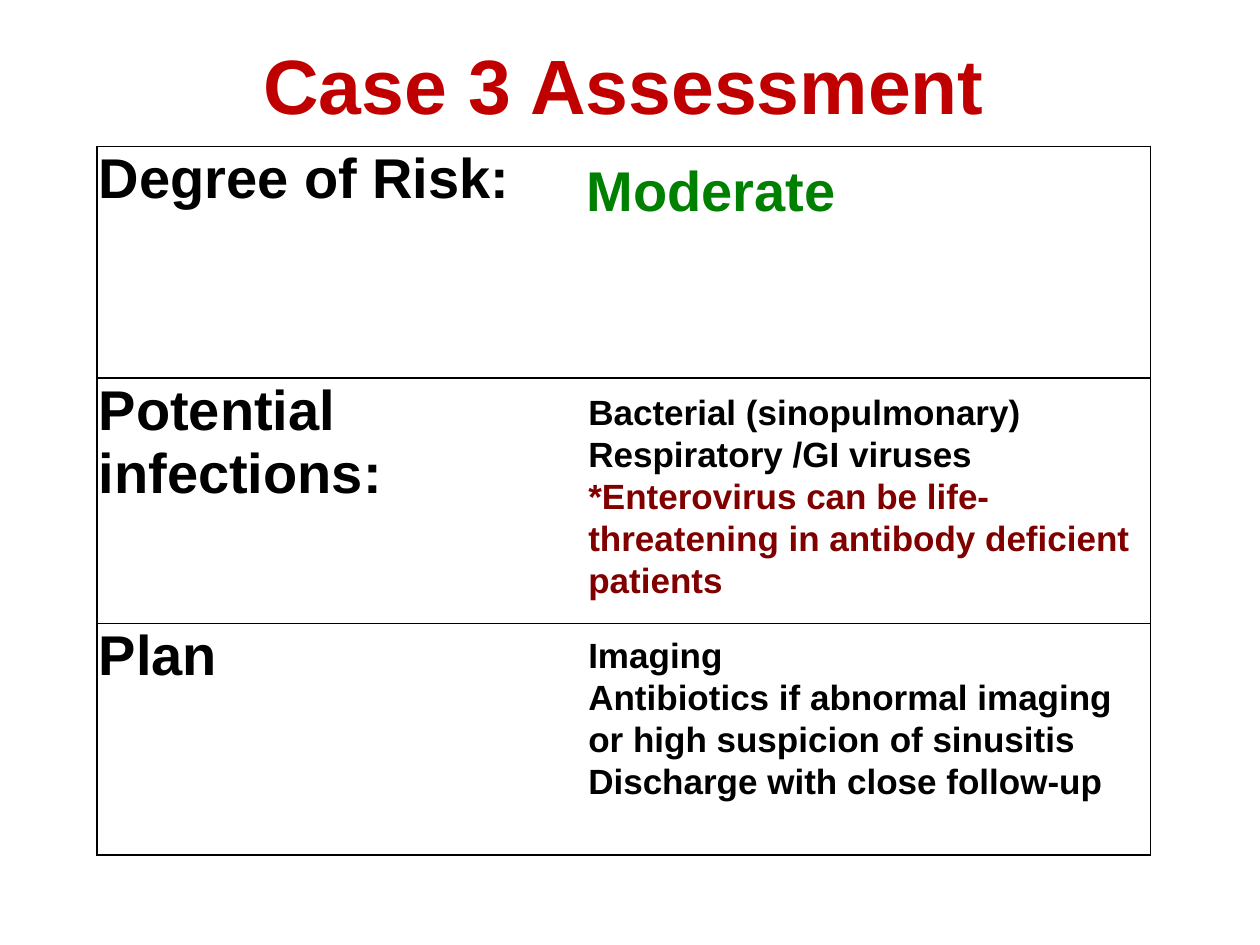
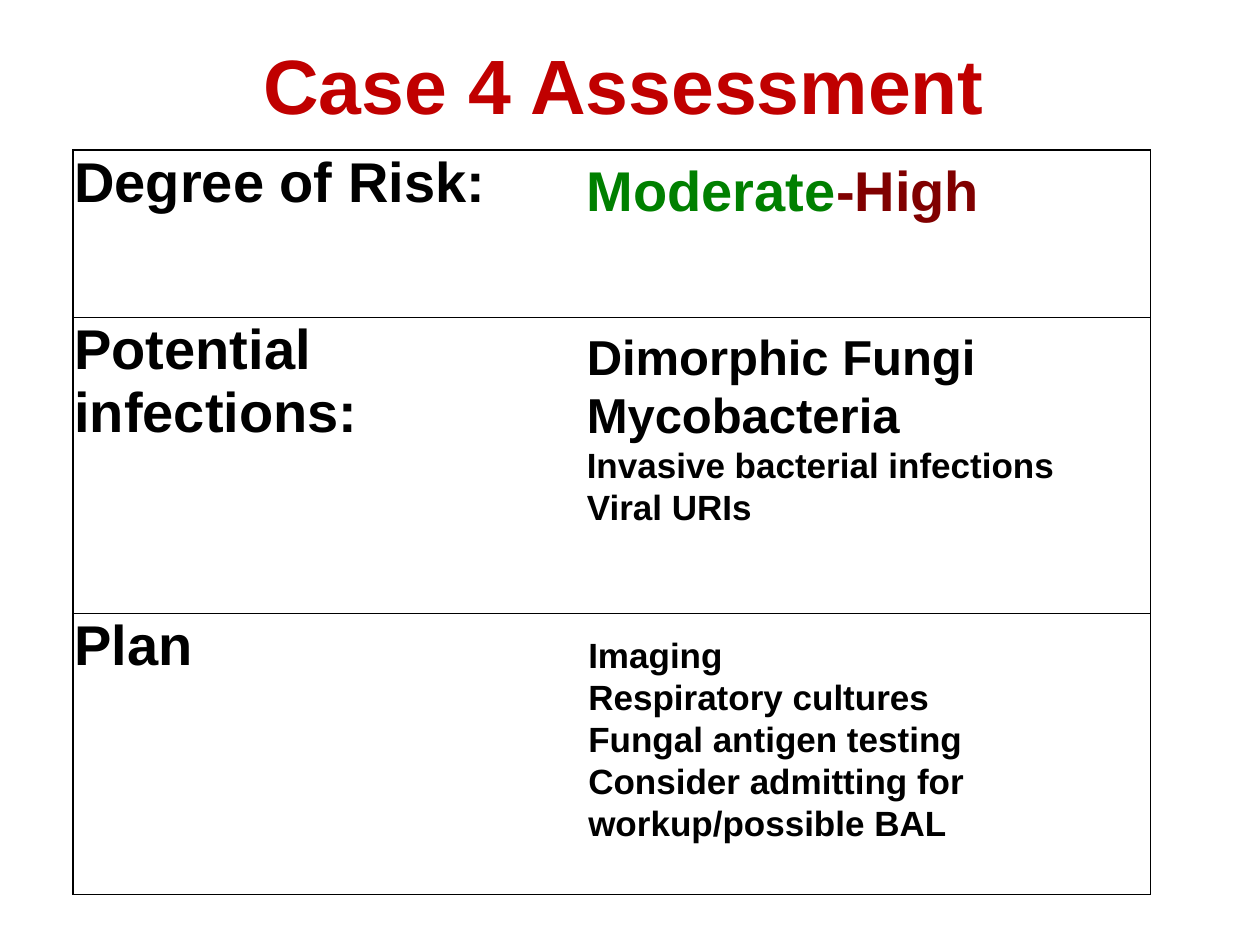
from dataclasses import dataclass

from lxml.etree import SubElement
from pptx import Presentation
from pptx.dml.color import RGBColor
from pptx.enum.text import MSO_AUTO_SIZE as AutoSize, PP_ALIGN as Align
from pptx.oxml.ns import qn
from pptx.slide import Slide
from pptx.table import _Cell as Cell
from pptx.text.text import _Paragraph as Paragraph
from pptx.util import Cm, Pt

FONT = "Arial"
RED = RGBColor(0xC0, 0x00, 0x00)
MAROON = RGBColor(0x80, 0x00, 0x00)
GREEN = RGBColor(0x00, 0x80, 0x00)
BLACK = RGBColor(0x00, 0x00, 0x00)

TABLE_RIGHT = 23.19
ANSWER_WIDTH = 12.07
ROW_LABELS = ("Degree of Risk:", "Potential\ninfections:", "Plan")


@dataclass(frozen=True)
class Run:
    text: str
    color: RGBColor = BLACK


@dataclass(frozen=True)
class Line:
    runs: tuple[Run, ...]
    size: int = 20


@dataclass(frozen=True)
class TextBox:
    """Lines of text in a box measured in centimetres."""
    left: float
    top: float
    width: float
    height: float
    lines: tuple[Line, ...]
    align: Align = Align.LEFT


@dataclass(frozen=True)
class Assessment:
    title: str
    table_left: float
    table_top: float
    row_heights: tuple[float, ...]
    answers: tuple[TextBox, ...]


def line(text: str, size: int = 20, color: RGBColor = BLACK) -> Line:
    return Line((Run(text, color),), size)


CASES = (
    Assessment("Case 3 Assessment", 1.96, 2.95, (4.67, 4.95, 4.67), (
        TextBox(11.58, 3.02, 5.84, 1.63, (line("Moderate", 32, GREEN),)),
        TextBox(11.61, 7.75, 11.61, 6.58, (
            line("Bacterial (sinopulmonary)"),
            line("Respiratory /GI viruses"),
            line("*Enterovirus can be life-threatening in antibody deficient patients",
                 color=MAROON))),
        TextBox(11.61, 12.65, 11.25, 3.68, (
            line("Imaging"),
            line("Antibiotics if abnormal imaging or high suspicion of sinusitis"),
            line("Discharge with close follow-up"))),
    )),
    Assessment("Case 4 Assessment", 1.47, 3.02, (3.38, 5.97, 5.66), (
        TextBox(11.58, 3.02, 9.17, 1.63, (
            Line((Run("Moderate", GREEN), Run("-High", MAROON)), 32),)),
        TextBox(11.58, 6.45, 11.61, 4.37, (
            line("Dimorphic Fungi", 28),
            line("Mycobacteria", 28),
            line("Invasive bacterial infections"),
            line("Viral URIs"))),
        TextBox(11.61, 12.65, 11.25, 5.38, (
            line("Imaging"),
            line("Respiratory cultures"),
            line("Fungal antigen testing"),
            line("Consider admitting for workup/possible BAL"))),
    )),
)


def style_paragraph(p: Paragraph, size: int) -> None:
    p.font.name = FONT
    p.font.size = Pt(size)
    p.font.bold = True


def add_text(slide: Slide, box: TextBox) -> None:
    sp = slide.shapes.add_textbox(Cm(box.left), Cm(box.top), Cm(box.width), Cm(box.height))
    tf = sp.text_frame
    tf.word_wrap = True
    tf.auto_size = AutoSize.SHAPE_TO_FIT_TEXT
    for i, item in enumerate(box.lines):
        p = tf.add_paragraph() if i else tf.paragraphs[0]
        p.alignment = box.align
        style_paragraph(p, item.size)
        for run in item.runs:
            r = p.add_run()
            r.text = run.text
            r.font.color.rgb = run.color


def set_borders(cell: Cell, visible: str) -> None:
    """Draw the sides named in visible (from LRTB) and hide the others."""
    tc_pr = cell._tc.get_or_add_tcPr()
    for i, side in enumerate("LRTB"):
        ln = SubElement(tc_pr, qn(f"a:ln{side}"), w=str(Pt(1)))
        if side in visible:
            fill = SubElement(ln, qn("a:solidFill"))
            SubElement(fill, qn("a:srgbClr"), val=str(BLACK))
        else:
            SubElement(ln, qn("a:noFill"))
        tc_pr.insert(i, ln)


def add_case_table(slide: Slide, case: Assessment) -> None:
    width = TABLE_RIGHT - case.table_left
    table = slide.shapes.add_table(
        len(ROW_LABELS), 2, Cm(case.table_left), Cm(case.table_top),
        Cm(width), Cm(sum(case.row_heights))).table
    table.first_row = table.horz_banding = False
    table.columns[0].width = Cm(width - ANSWER_WIDTH)
    table.columns[1].width = Cm(ANSWER_WIDTH)
    for row, height, label in zip(table.rows, case.row_heights, ROW_LABELS):
        row.height = Cm(height)
        for cell, sides in zip(row.cells, ("LTB", "RTB")):
            cell.fill.background()
            set_borders(cell, sides)
        cell = row.cells[0]
        cell.margin_left = cell.margin_right = cell.margin_top = Cm(0.03)
        cell.margin_bottom = 0
        cell.text_frame.text = label
        for p in cell.text_frame.paragraphs:
            style_paragraph(p, 32)
            p.font.color.rgb = BLACK


def main() -> None:
    prs = Presentation()
    prs.slide_width, prs.slide_height = Cm(25.4), Cm(19.05)
    for case in CASES:
        slide = prs.slides.add_slide(prs.slide_layouts[6])
        add_text(slide, TextBox(0.91, 0.64, 23.34, 2.13,
                                (line(case.title, 44, RED),), Align.CENTER))
        add_case_table(slide, case)
        for answer in case.answers:
            add_text(slide, answer)
    prs.save("out.pptx")


if __name__ == "__main__":
    main()
